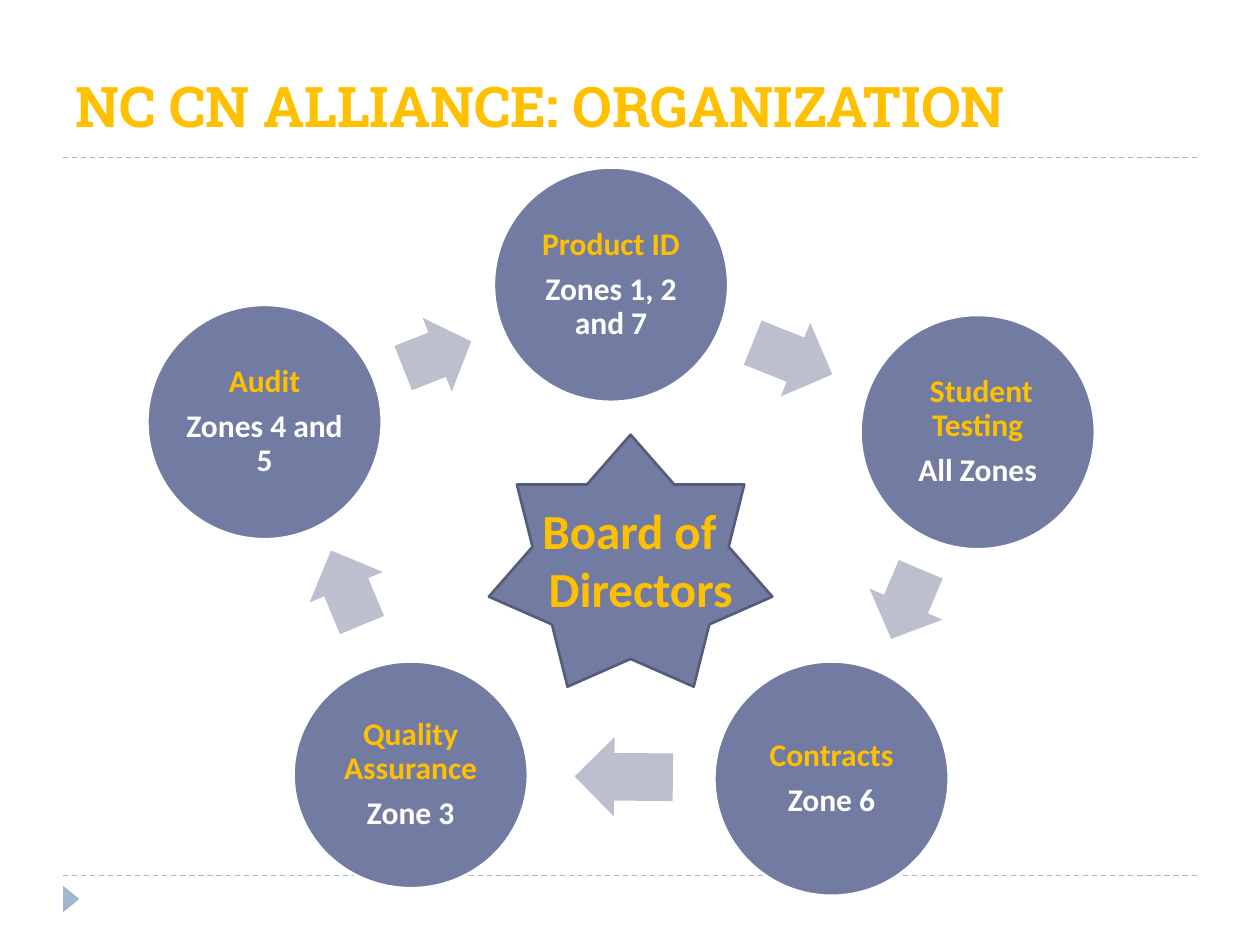
from pptx import Presentation
from pptx.dml.color import RGBColor
from pptx.enum.dml import MSO_LINE
from pptx.enum.shapes import MSO_CONNECTOR, MSO_SHAPE
from pptx.enum.text import MSO_ANCHOR, PP_ALIGN
from pptx.oxml.ns import qn
from pptx.util import Inches, Pt

ELLIPSE, ARROW = MSO_SHAPE.OVAL, MSO_SHAPE.RIGHT_ARROW
STAR, TRIANGLE = MSO_SHAPE.STAR_7_POINT, MSO_SHAPE.ISOSCELES_TRIANGLE
STRAIGHT, DASH = MSO_CONNECTOR.STRAIGHT, MSO_LINE.DASH
TOP, MIDDLE, BOTTOM = MSO_ANCHOR.TOP, MSO_ANCHOR.MIDDLE, MSO_ANCHOR.BOTTOM
LEFT, CENTER = PP_ALIGN.LEFT, PP_ALIGN.CENTER

GOLD, WHITE, SLATE, EDGE = "FFC000", "FFFFFF", "727CA3", "545C79"
PALE, RULE = "BCBFCE", "9FB8CD"
CIRCLE = 1.86
ARROW_HEIGHT = 0.63

# left, top, height, heading, zones, first-line indent of the heading
COMMITTEES = [
    (3.92, 1.33, CIRCLE, "Product ID", "Zones 1, 2 and 7", 0),
    (6.83, 2.50, CIRCLE, "Student Testing", "All Zones", 0.06),
    (5.67, 5.25, CIRCLE, "Contracts", "Zone 6", 0),
    (2.33, 5.25, 1.80, "Quality Assurance", "Zone 3", 0),
    (1.17, 2.42, CIRCLE, "Audit", "Zones 4 and 5", 0),
]
# left, top, width, rotation
ARROWS = [
    (5.95, 2.53, 0.68, 21.8),
    (6.89, 4.48, 0.60, 113),
    (4.56, 5.85, 0.78, 180.5),
    (2.43, 4.35, 0.64, 247.4),
    (3.18, 2.50, 0.58, 338.5),
]


def rgb(value):
    return RGBColor.from_string(value)


class SlideBuilder:
    """Holds the text style and the page being drawn."""

    def __init__(self, page, font):
        self.page = page
        self.font = font

    def rule(self, y):
        line = self.page.shapes.add_connector(
            STRAIGHT, Inches(0.5), Inches(y), Inches(9.5), Inches(y))
        line.line.color.rgb = rgb(RULE)
        line.line.width = Pt(0.75)
        line.line.dash_style = DASH
        properties = line._element.spPr
        properties.append(properties.makeelement(qn("a:effectLst"), {}))

    def shape(self, kind, bounds, fill, outline=None, rotation=0):
        shape = self.page.shapes.add_shape(kind, *map(Inches, bounds))
        shape.shadow.inherit = False
        shape.rotation = rotation
        shape.fill.solid()
        shape.fill.fore_color.rgb = rgb(fill)
        if outline:
            shape.line.color.rgb = rgb(outline)
            shape.line.width = Pt(1.5)
        else:
            shape.line.fill.background()
        return shape

    def text_box(self, bounds):
        return self.page.shapes.add_textbox(*map(Inches, bounds))

    def fill_text(self, box, lines, size, anchor=TOP, margin=None, font=None,
                  **layout):
        """Fill a box with (text, colour, first-line indent) paragraphs."""
        frame = box.text_frame
        frame.word_wrap = True
        frame.vertical_anchor = anchor
        if margin is not None:
            for side in ("left", "top", "right", "bottom"):
                setattr(frame, f"margin_{side}", Inches(margin))
        for index, (text, color, indent) in enumerate(lines):
            para = frame.add_paragraph() if index else frame.paragraphs[0]
            for name, value in layout.items():
                setattr(para, name, value)
            if indent:
                para._p.get_or_add_pPr().set("indent", str(Inches(indent)))
            span = para.add_run()
            span.text = text
            style = {"name": font or self.font, "size": Pt(size), "bold": True}
            for name, value in style.items():
                setattr(span.font, name, value)
            span.font.color.rgb = rgb(color)


def main():
    deck = Presentation()
    deck.slide_width, deck.slide_height = Inches(10), Inches(7.5)
    page = deck.slides.add_slide(deck.slide_layouts[6])
    builder = SlideBuilder(page, "Calibri")

    for y in (6.95, 1.25):
        builder.rule(y)
    builder.shape(TRIANGLE, (0.46, 7.07, 0.21, 0.13), RULE, rotation=90)

    for left, top, height, heading, zones, indent in COMMITTEES:
        circle = builder.shape(ELLIPSE, (left, top, CIRCLE, height), SLATE, WHITE)
        builder.fill_text(circle, [(heading, GOLD, indent), (zones, WHITE, 0)], 18,
                          MIDDLE, 0.03, alignment=CENTER, line_spacing=0.9,
                          space_after=Pt(6.3))
    for left, top, width, rotation in ARROWS:
        arrow = builder.shape(ARROW, (left, top, width, ARROW_HEIGHT), PALE,
                              rotation=rotation)
        arrow.adjustments[0] = 0.6

    builder.shape(STAR, (3.88, 3.45, 2.25, 2), SLATE, EDGE)
    builder.fill_text(builder.text_box((0.5, 0.5, 9, 0.65)),
                      [("NC CN ALLIANCE: ORGANIZATION", GOLD, 0)], 32, BOTTOM,
                      font="Roboto Slab", alignment=LEFT)
    builder.fill_text(builder.text_box((3.62, 3.92, 2.75, 1.99)),
                      [("Board of", GOLD, 0), ("Directors", GOLD, 0.18)], 28,
                      alignment=CENTER)
    deck.save("out.pptx")


if __name__ == "__main__":
    main()
